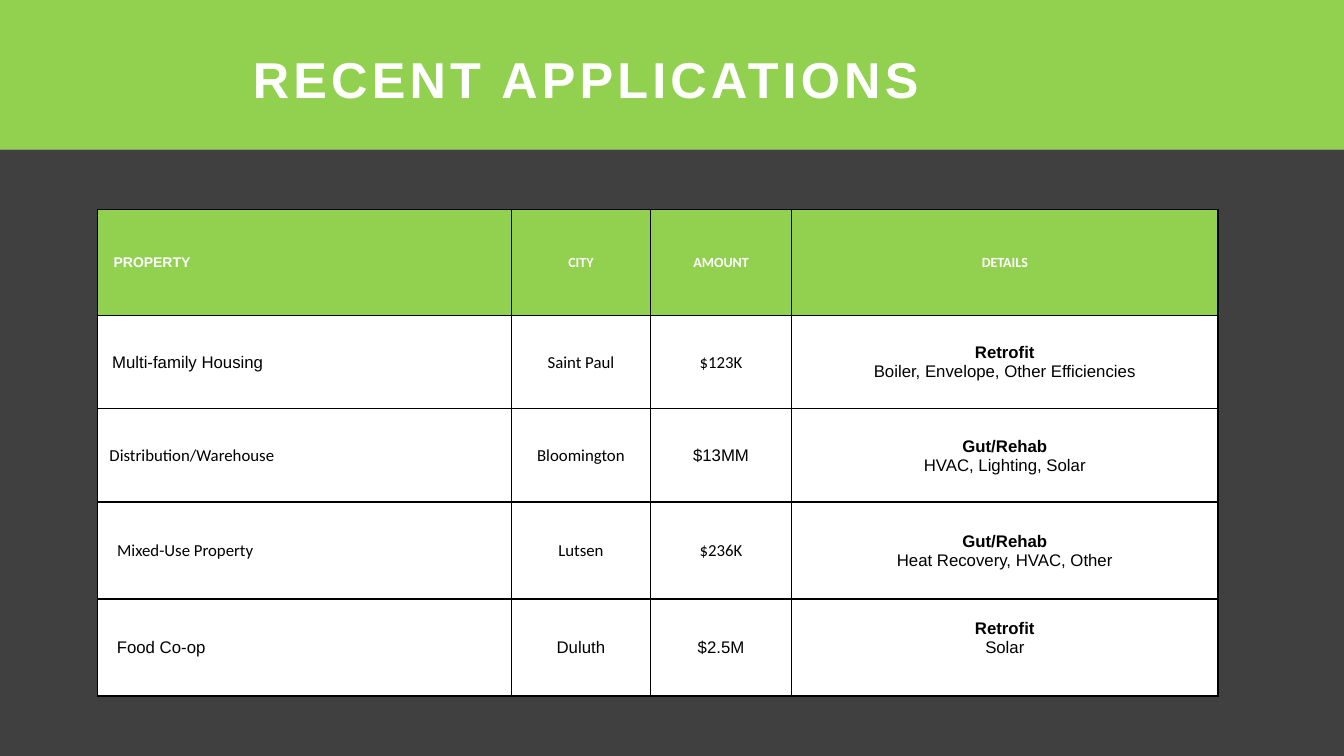
from lxml.etree import SubElement
from pptx import Presentation
from pptx.dml.color import RGBColor
from pptx.enum.shapes import MSO_SHAPE
from pptx.enum.text import MSO_ANCHOR, PP_ALIGN
from pptx.oxml.ns import qn
from pptx.util import Pt

GREEN = RGBColor(0x92, 0xD0, 0x50)
CHARCOAL = RGBColor(0x40, 0x40, 0x40)
WHITE = RGBColor(0xFF, 0xFF, 0xFF)
BLACK = RGBColor(0x00, 0x00, 0x00)
ARIAL, CALIBRI = "Arial", "Calibri"

WIDTH, HEIGHT, BANNER = 960, 540, 106.8
COLUMNS = [295.9, 99.4, 100.8, 304.6]
ROW_HEIGHTS = [75.4, 66.9, 66.6, 69.3, 69.3]

# Each cell is (text, font); a details cell has a bold first line
ROWS = [
    [("PROPERTY", ARIAL), ("CITY", CALIBRI), ("AMOUNT", CALIBRI), ("DETAILS", CALIBRI)],
    [("Multi-family Housing", ARIAL), ("Saint Paul", CALIBRI), ("$123K", CALIBRI),
     ("Retrofit\nBoiler, Envelope, Other Efficiencies", ARIAL)],
    [("Distribution/Warehouse", CALIBRI), ("Bloomington", CALIBRI), ("$13MM", ARIAL),
     ("Gut/Rehab\nHVAC, Lighting, Solar", ARIAL)],
    [("Mixed-Use Property", CALIBRI), ("Lutsen", CALIBRI), ("$236K", CALIBRI),
     ("Gut/Rehab\nHeat Recovery, HVAC, Other", ARIAL)],
    [("Food Co-op", ARIAL), ("Duluth", ARIAL), ("$2.5M", ARIAL),
     ("Retrofit\nSolar", ARIAL)],
]
PROPERTY_INDENTS = [11.8, 10.7, 8.8, 14.3, 14.1]
LAST_DETAILS_LIFT = 13.8


class SlideBuilder:
    def __init__(self, slide):
        self.s = slide
        self.inset = 0.72
        self.border = 1

    def band(self, top, height, color):
        sp = self.s.shapes.add_shape(MSO_SHAPE.RECTANGLE, 0, Pt(top), Pt(WIDTH), Pt(height))
        sp.shadow.inherit = False
        sp.fill.solid()
        sp.fill.fore_color.rgb = color
        sp.line.fill.background()

    def style(self, p, font, size, color, bold, align):
        p.alignment = align
        p.font.name = font
        p.font.size = Pt(size)
        p.font.bold = bold
        p.font.color.rgb = color

    def title(self, text, left, top, width, height):
        tf = self.s.shapes.add_textbox(Pt(left), Pt(top), Pt(width), Pt(height)).text_frame
        tf.word_wrap = True
        p = tf.paragraphs[0]
        r = p.add_run()
        r.text = text
        self.style(p, ARIAL, 36, WHITE, True, PP_ALIGN.CENTER)
        r.font._element.set("spc", "300")

    def borders(self, cell):
        tc_pr = cell._tc.get_or_add_tcPr()
        for i, side in enumerate(("a:lnL", "a:lnR", "a:lnT", "a:lnB")):
            ln = tc_pr.makeelement(qn(side), {"w": str(Pt(self.border))})
            fill = SubElement(ln, qn("a:solidFill"))
            SubElement(fill, qn("a:srgbClr"), val=str(BLACK))
            tc_pr.insert(i, ln)

    def cell(self, cell, text, font, header, align):
        cell.fill.solid()
        cell.fill.fore_color.rgb = GREEN if header else WHITE
        cell.vertical_anchor = MSO_ANCHOR.MIDDLE
        cell.margin_left = cell.margin_right = cell.margin_top = Pt(self.inset)
        cell.margin_bottom = 0
        self.borders(cell)
        cell.text = text
        for i, p in enumerate(cell.text_frame.paragraphs):
            bold = header or ("\n" in text and i == 0)
            self.style(p, font, 10 if header else 12, WHITE if header else BLACK, bold, align)

    def table(self, left, top):
        table = self.s.shapes.add_table(
            len(ROWS), len(COLUMNS), Pt(left), Pt(top),
            Pt(sum(COLUMNS)), Pt(sum(ROW_HEIGHTS))).table
        table.first_row = table.horz_banding = False
        for column, width in zip(table.columns, COLUMNS):
            column.width = Pt(width)
        for i, row in enumerate(ROWS):
            table.rows[i].height = Pt(ROW_HEIGHTS[i])
            for j, (text, font) in enumerate(row):
                align = PP_ALIGN.CENTER if j else PP_ALIGN.LEFT
                self.cell(table.cell(i, j), text, font, i == 0, align)
            table.cell(i, 0).margin_left = Pt(PROPERTY_INDENTS[i])
        table.cell(len(ROWS) - 1, len(COLUMNS) - 1).margin_bottom = Pt(LAST_DETAILS_LIFT)


def main():
    prs = Presentation()
    prs.slide_width, prs.slide_height = Pt(WIDTH), Pt(HEIGHT)
    builder = SlideBuilder(prs.slides.add_slide(prs.slide_layouts[6]))

    # Background and banner
    builder.band(BANNER, HEIGHT - BANNER, CHARCOAL)
    builder.band(0, BANNER, GREEN)
    builder.title("RECENT APPLICATIONS", 0, 31, 837.4, 51)

    # Applications table
    builder.table(69.4, 149.7)

    prs.save("out.pptx")


if __name__ == "__main__":
    main()
